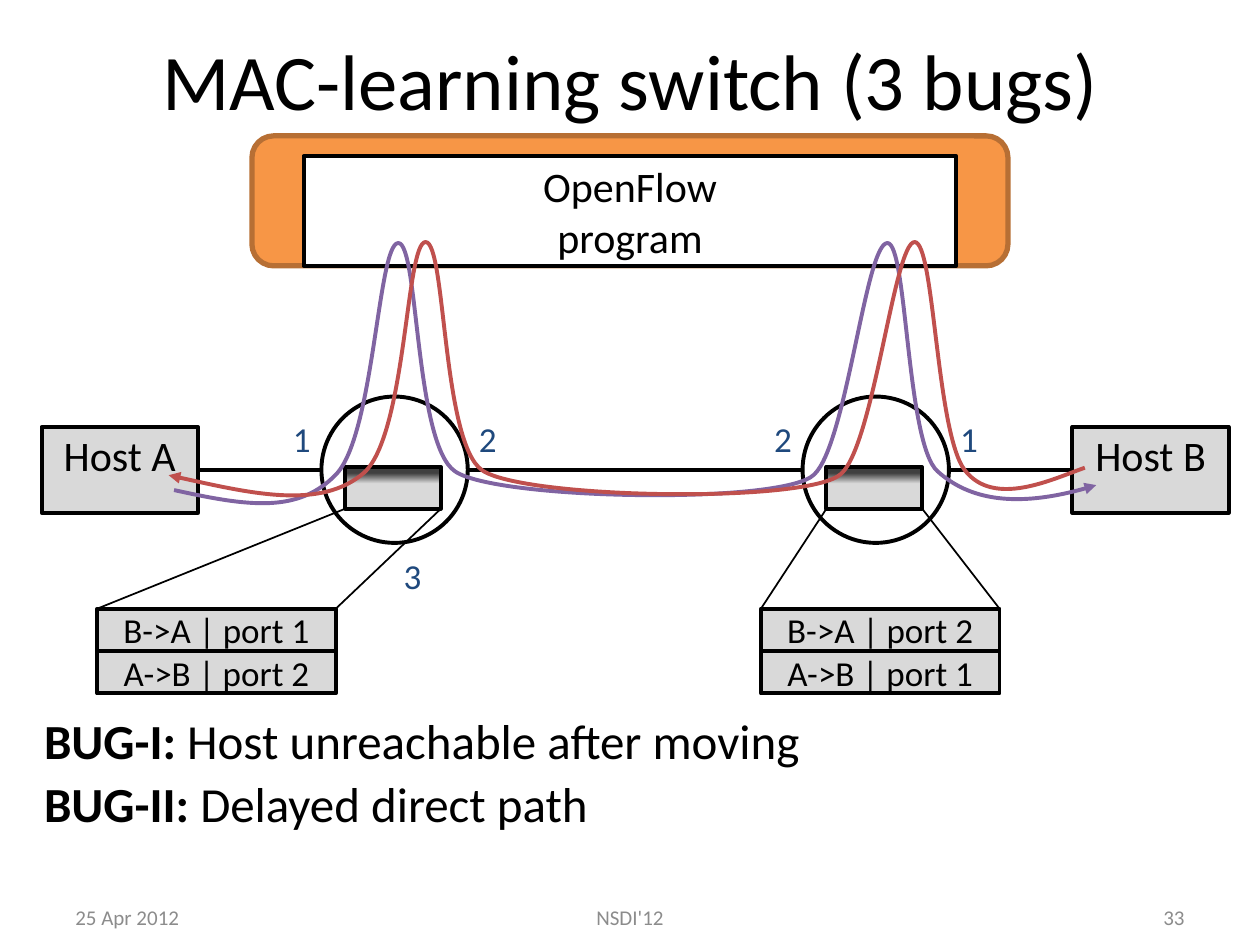
from dataclasses import dataclass
from lxml.etree import SubElement
from pptx import Presentation
from pptx.dml.color import RGBColor
from pptx.enum.shapes import MSO_CONNECTOR, MSO_SHAPE
from pptx.enum.text import MSO_ANCHOR, PP_ALIGN
from pptx.oxml.ns import qn
from pptx.util import Cm, Pt


@dataclass(frozen=True)
class Theme:
    """Colours, type sizes and line widths of the slide."""
    font: str = "Calibri"
    ink: str = "000000"
    paper: str = "FFFFFF"
    gray: str = "D9D9D9"
    dark: str = "404040"
    mute: str = "8C8C8C"
    blue: str = "1F497D"
    orange: str = "F79646"
    rust: str = "B76F34"
    purple: str = "8064A2"
    red: str = "C0504D"
    title: int = 45
    bug: int = 28
    body: int = 24
    label: int = 20
    foot: int = 12
    thin: float = 1
    bold: float = 2.25
    thick: float = 3


T = Theme()
LEFT, MID, RIGHT = PP_ALIGN.LEFT, PP_ALIGN.CENTER, PP_ALIGN.RIGHT
TOP, CENTER = MSO_ANCHOR.TOP, MSO_ANCHOR.MIDDLE
PURPLE = [
    (0, 4.98), (1.5, 5.31), (2.51, 5.46), (3.28, 4.65),
    (4.04, 3.81), (4.11, 0), (4.52, 0), (4.93, 0), (4.85, 4.04), (5.66, 4.6),
    (6.48, 5.18), (12.27, 5.28), (12.9, 4.67),
    (13.56, 4.06), (13.94, 0), (14.38, 0), (14.78, 0), (14.76, 4.04), (15.39, 4.6),
    (16.03, 5.18), (17.07, 5.36), (18.59, 4.88)]
RED = [
    (0, 4.7), (1.5, 5.03), (3.07, 5.41), (3.94, 4.65),
    (4.8, 3.86), (4.78, 0), (5.18, 0), (5.59, 0), (5.51, 4.04), (6.32, 4.6),
    (7.14, 5.18), (12.93, 5.28), (13.56, 4.67),
    (14.22, 4.06), (14.63, 0), (15.04, 0), (15.44, 0), (15.47, 3.84), (16.05, 4.6),
    (16.64, 5.36), (17.81, 4.78), (18.47, 4.55)]


def rgb(code):
    """Turn a hex code into a colour."""
    return RGBColor.from_string(code)


def write(shape, text, size, color=T.ink, align=MID, anchor=CENTER,
          inset=(0.25, 0.13), lead="", wrap=True):
    """Set one paragraph in a shape, with an optional bold lead."""
    frame = shape.text_frame
    frame.word_wrap = wrap
    frame.vertical_anchor = anchor
    frame.margin_left = frame.margin_right = Cm(inset[0])
    frame.margin_top = frame.margin_bottom = Cm(inset[1])
    para = frame.paragraphs[0]
    para.text = lead + text if not lead else lead
    if lead:
        para.runs[0].font.bold = True
        para.add_run().text = text
    para.alignment = align
    font = para.font
    font.name, font.size = T.font, Pt(size)
    font.color.rgb = rgb(color)


def label(slide, box, text, size, **style):
    """Place a text box."""
    write(slide.shapes.add_textbox(*map(Cm, box)), text, size, **style)


def block(slide, kind, box, fill=None, line=T.ink, width=T.bold):
    """Place a preset shape with a flat fill or none."""
    shape = slide.shapes.add_shape(kind, *map(Cm, box))
    shape.shadow.inherit = False
    if fill:
        shape.fill.solid()
        shape.fill.fore_color.rgb = rgb(fill)
    else:
        shape.fill.background()
    shape.line.color.rgb = rgb(line)
    shape.line.width = Pt(width)
    return shape


def wire(slide, start, end, width=T.bold):
    """Draw a straight black line."""
    link = slide.shapes.add_connector(MSO_CONNECTOR.STRAIGHT, *map(Cm, start + end))
    link.line.color.rgb = rgb(T.ink)
    link.line.width = Pt(width)
    SubElement(link._element.spPr, qn("a:effectLst"))


def control(slide, box):
    """Draw the controller with its program."""
    x, y, w, h = box
    block(slide, MSO_SHAPE.ROUNDED_RECTANGLE, box, T.orange, T.rust, T.thick)
    inner = block(slide, MSO_SHAPE.RECTANGLE,
                  (x + 1.04, y + 0.41, w - 2.08, h - 0.41), T.paper)
    write(inner, "OpenFlow\vprogram", T.body)


def host(slide, box, name):
    """Draw a host."""
    shape = block(slide, MSO_SHAPE.RECTANGLE, box, T.gray)
    write(shape, name, T.body, anchor=TOP, inset=(0.05, 0.05))


def switch(slide, box, ports, table, rules):
    """Draw a switch with its ports and the rules of its flow table."""
    x, y, w, h = box
    block(slide, MSO_SHAPE.OVAL, box)
    bx, by, bw, bh = x + 0.48, y + 1.42, 1.93, 0.84
    store = block(slide, MSO_SHAPE.RECTANGLE, (bx, by, bw, bh), T.gray)
    store.fill.gradient()
    store.fill.gradient_angle = 270
    for stop, spot, color in zip(store.fill.gradient_stops, (0.15, 0.4), (T.dark, T.gray)):
        stop.position = spot
        stop.color.rgb = rgb(color)
    spots = ((-0.66, 0.38), (w + 0.14, 0.38), (1.57, 3.13))
    for port, (dx, dy) in zip(ports, spots):
        label(slide, (x + dx, y + dy, 0.53, 0.94), port, T.label, color=T.blue,
              anchor=TOP, inset=(0.08, 0.05), wrap=False)
    tx, ty, tw, th = table
    wire(slide, (tx, ty), (bx, by + bh), T.thin)
    wire(slide, (tx + tw, ty), (bx + bw, by + bh), T.thin)
    step = th / len(rules)
    for i, rule in enumerate(rules):
        row = block(slide, MSO_SHAPE.RECTANGLE, (tx, ty + i * step, tw, step), T.gray)
        write(row, rule, T.label, inset=(0.05, 0.05))


def flow(slide, spot, points, color, end):
    """Draw a smooth packet route, with an arrowhead at the given end."""
    x, y = spot
    first, *rest = [(Cm(x + dx), Cm(y + dy)) for dx, dy in points]
    draft = slide.shapes.build_freeform(*first)
    draft.add_line_segments(rest, close=False)
    route = draft.convert_to_shape()
    legs = list(route._element.iter(qn("a:lnTo")))
    for trio in zip(legs[::3], legs[1::3], legs[2::3]):
        trio[0].tag = qn("a:cubicBezTo")
        for leg in trio[1:]:
            trio[0].append(leg[0])
            leg.getparent().remove(leg)
    route.shadow.inherit = False
    route.fill.background()
    route.line.color.rgb = rgb(color)
    route.line.width = Pt(T.bold)
    SubElement(route.line._get_or_add_ln(), qn(end), type="triangle")


def network(slide, box):
    """Draw hosts, wires, switches and routes."""
    x, y, w, h = box
    mid, size, wide = y + 6.73, 2.95, 3.15
    one, two, far = x + 5.64, x + 15.34, x + w - wide
    for start, end in ((x + wide, one), (one + size, two), (two + size, far)):
        wire(slide, (start, mid), (end, mid))
    control(slide, (x + 4.24, y, 15.24, 2.62))
    for left, name in ((x, "Host A"), (far, "Host B")):
        host(slide, (left, mid - 0.86, wide, 1.73), name)
    for left, ports, tx, rules in (
            (one, "123", x + 1.12, ("B->A | port 1", "A->B | port 2")),
            (two, "21", x + 14.5, ("B->A | port 2", "A->B | port 1"))):
        switch(slide, (left, mid - size / 2, size, size), ports,
               (tx, y + h - 1.71, 4.81, 1.71), rules)
    flow(slide, (x + 2.67, y + 2.16), PURPLE, T.purple, "a:tailEnd")
    flow(slide, (x + 2.56, y + 2.14), RED, T.red, "a:headEnd")


def bugs(slide, box):
    """List the bugs."""
    x, y, w, h = box
    for i, (lead, text) in enumerate((("BUG-I: ", "Host unreachable after moving"),
                                      ("BUG-II: ", "Delayed direct path"))):
        label(slide, (x, y + i * h / 2, w, 1.45), text, T.bug,
              align=LEFT, anchor=TOP, lead=lead)


def footer(slide, box):
    """Place date, event and page number."""
    x, y, w, h = box
    for left, wide, text, align in ((x, 5.92, "25 Apr 2012", LEFT),
                                    (x + (w - 8.04) / 2, 8.04, "NSDI'12", MID),
                                    (x + w - 5.92, 5.92, "33", RIGHT)):
        label(slide, (left, y, wide, h), text, T.foot, color=T.mute, align=align)


def main():
    """Build and save the slide."""
    deck = Presentation()
    deck.slide_width, deck.slide_height = Cm(25.4), Cm(19.05)
    slide = deck.slides.add_slide(deck.slide_layouts[6])
    label(slide, (1.27, 0, 22.86, 3.18), "MAC-learning switch (3 bugs)", T.title)
    network(slide, (0.84, 2.74, 23.93, 11.24))
    bugs(slide, (0.64, 14.2, 16.23, 2.54))
    footer(slide, (1.27, 17.98, 22.86, 1.02))
    deck.save("out.pptx")


if __name__ == "__main__":
    main()
